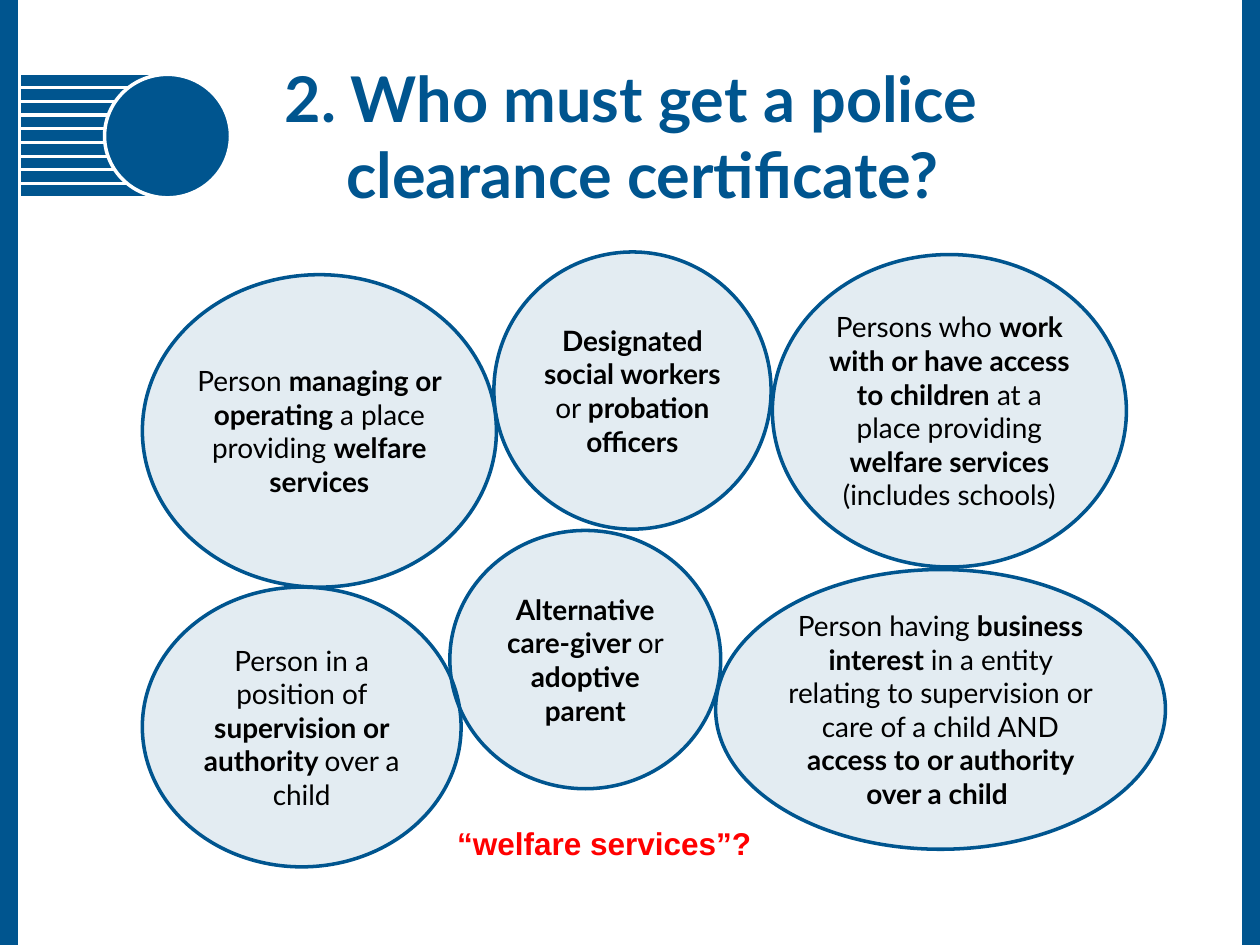
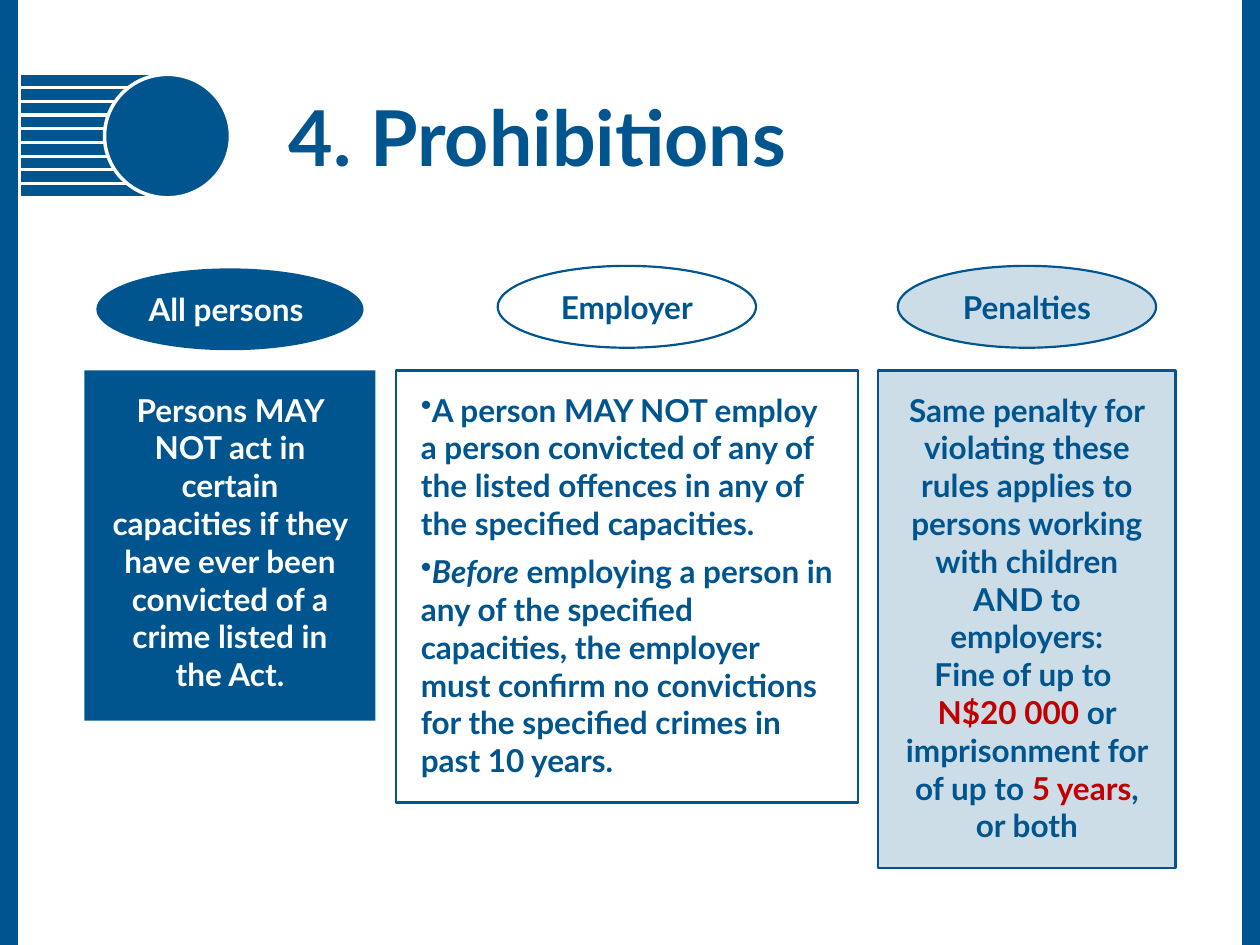
from dataclasses import dataclass
from typing import Optional

from lxml import etree
from pptx import Presentation
from pptx.dml.color import RGBColor
from pptx.enum.shapes import MSO_CONNECTOR, MSO_SHAPE
from pptx.enum.text import MSO_ANCHOR, PP_ALIGN
from pptx.oxml.ns import qn
from pptx.util import Inches, Pt

OVAL, RECTANGLE = MSO_SHAPE.OVAL, MSO_SHAPE.RECTANGLE
STRAIGHT = MSO_CONNECTOR.STRAIGHT
LEFT, CENTER = PP_ALIGN.LEFT, PP_ALIGN.CENTER
TOP, MIDDLE = MSO_ANCHOR.TOP, MSO_ANCHOR.MIDDLE

# The page is a grid of square cells
COLUMNS, ROWS = 100, 75
CELL = Inches(0.1)


@dataclass(frozen=True)
class Theme:
    blue: str = "00558F"
    white: str = "FFFFFF"
    black: str = "000000"
    red: str = "FF0000"
    dark_red: str = "C00000"
    font: str = "Lato"
    note_font: str = "Arial"
    long_title: int = 36
    short_title: int = 44
    body: int = 18
    bubble: int = 16


THEME = Theme()


@dataclass(frozen=True)
class Box:
    col: float
    row: float
    cols: float
    rows: float

    def lengths(self) -> list[int]:
        return [cells(n) for n in (self.col, self.row, self.cols, self.rows)]


@dataclass(frozen=True)
class Look:
    fill: str
    line: Optional[str] = None
    line_width: float = 1.25
    opacity: int = 100


@dataclass(frozen=True)
class Span:
    text: str
    bold: bool = True
    italic: bool = False
    color: Optional[str] = None


@dataclass(frozen=True)
class TextStyle:
    size: int
    color: str = THEME.blue
    font: str = THEME.font
    align: PP_ALIGN = CENTER
    anchor: MSO_ANCHOR = TOP
    inset: tuple[float, float] = (0, 0)
    wrap: bool = True
    bullet: bool = False
    space_after: int = 0
    hanging: float = 0


@dataclass(frozen=True)
class Bubble:
    box: Box
    spans: list[Span]


@dataclass(frozen=True)
class Rule:
    heading: str
    heading_row: float
    heading_cols: float
    cols: float
    rows: float
    look: Look
    style: TextStyle
    paragraphs: list[list[Span]]


def cells(count: float) -> int:
    return round(count * CELL)


def plain(text: str) -> Span:
    return Span(text, bold=False)


# Drawing helpers
def write(shape, paragraphs: list[list[Span]], style: TextStyle) -> None:
    frame = shape.text_frame
    frame.word_wrap = style.wrap
    frame.vertical_anchor = style.anchor
    across, down = (cells(n) for n in style.inset)
    frame.margin_left = frame.margin_right = across
    frame.margin_top = frame.margin_bottom = down
    for index, spans in enumerate(paragraphs):
        para = frame.add_paragraph() if index else frame.paragraphs[0]
        para.alignment = style.align
        para.space_after = Pt(style.space_after)
        properties = para._p.get_or_add_pPr()
        properties.set("marL", str(cells(style.hanging)))
        properties.set("indent", str(-cells(style.hanging)))
        if style.bullet:
            etree.SubElement(properties, qn("a:buChar")).set("char", "•")
        for span in spans:
            for line_index, line in enumerate(span.text.split("\n")):
                if line_index:
                    para.add_line_break()
                if line:
                    run = para.add_run()
                    run.text = line
                    font = run.font
                    font.name, font.size = style.font, Pt(style.size)
                    font.bold, font.italic = span.bold, span.italic
                    font.color.rgb = RGBColor.from_string(span.color or style.color)


def draw_shape(page, kind: MSO_SHAPE, box: Box, look: Look):
    shape = page.shapes.add_shape(kind, *box.lengths())
    shape.shadow.inherit = False
    shape.fill.solid()
    shape.fill.fore_color.rgb = RGBColor.from_string(look.fill)
    if look.opacity < 100:
        color = shape.element.spPr.find(qn("a:solidFill")).find(qn("a:srgbClr"))
        etree.SubElement(color, qn("a:alpha")).set("val", str(look.opacity * 1000))
    if look.line:
        shape.line.color.rgb = RGBColor.from_string(look.line)
        shape.line.width = Pt(look.line_width)
    else:
        shape.line.fill.background()
    return shape


def draw_text(page, box: Box, text: str, style: TextStyle, color: Optional[str] = None) -> None:
    write(page.shapes.add_textbox(*box.lengths()), [[Span(text, color=color)]], style)


def draw_line(page, start: tuple[float, float], end: tuple[float, float], width: float) -> None:
    line = page.shapes.add_connector(STRAIGHT, *(cells(n) for n in start + end))
    line.line.color.rgb = RGBColor.from_string(THEME.blue)
    line.line.width = Pt(width)
    etree.SubElement(line.element.spPr, qn("a:effectLst"))


def add_page(deck):
    """Blank page with side bands and the striped emblem."""
    page = deck.slides.add_slide(deck.slide_layouts[6])
    band_inset = 0.7
    for col in (band_inset, COLUMNS - band_inset):
        draw_line(page, (col, 0), (col, ROWS), 10)
    for stripe in range(9):
        row = 6.4 + 1.09 * stripe
        draw_line(page, (1.7, row), (12.9, row), 6)
    draw_shape(page, OVAL, Box(8.3, 5.9, 10, 9.8), Look(THEME.blue, THEME.white, 2))
    return page


# Page 1: who needs a certificate
BUBBLE_LOOK = Look(THEME.blue, THEME.blue, 2, opacity=11)
BUBBLE_STYLE = TextStyle(THEME.bubble, THEME.black, anchor=MIDDLE)
BUBBLES = [
    Bubble(Box(35.7, 42.1, 21.5, 20.5), [
        Span("Alternative care-giver "), plain("or "), Span("adoptive parent")]),
    Bubble(Box(61.3, 20.2, 28.1, 24.8), [
        plain("Persons who "), Span("work with or have access to children"),
        plain(" at a place providing "), Span("welfare services "),
        plain("(includes schools)")]),
    Bubble(Box(11.3, 46.6, 25.3, 22.2), [
        plain("Person in a position of "), Span("supervision or authority "),
        plain("over a child")]),
    Bubble(Box(56.8, 45.2, 35.7, 22.2), [
        plain("Person having "), Span("business interest "),
        plain("in a entity relating to supervision or care of a child AND "),
        Span("access to or authority over a child ")]),
    Bubble(Box(39.2, 20, 22, 22), [
        Span("Designated social workers "), plain("or "), Span("probation officers")]),
    Bubble(Box(11.3, 21.8, 28.1, 24.8), [
        plain("Person "), Span("managing or operating "),
        plain("a place providing "), Span("welfare services")]),
]


def build_certificate_page(deck) -> None:
    page = add_page(deck)
    title_style = TextStyle(THEME.long_title, align=LEFT, anchor=MIDDLE,
                            inset=(1, 0.5), hanging=4.9)
    draw_text(page, Box(21.6, 4.5, 79.5, 12.5),
              "2. Who must get a police \nclearance certificate?", title_style)
    for bubble in BUBBLES:
        shape = draw_shape(page, OVAL, bubble.box, BUBBLE_LOOK)
        write(shape, [bubble.spans], BUBBLE_STYLE)
    note_style = TextStyle(THEME.body, THEME.red, THEME.note_font, LEFT,
                           inset=(1, 0.5), wrap=False)
    draw_text(page, Box(35.3, 64.9, 25.6, 4), "“welfare services”?", note_style)


# Page 2: prohibitions in three columns
PANEL_INSET = (2, 1.6)
HEADING_INSET = (0.8, 0.8)
FIRST_COL, PANEL_ROW, PANEL_GAP, HEADING_ROWS = 6.7, 29.4, 1.6, 6.5
RULES = [
    Rule("All persons ", 21.3, 21.2, 23.1, 27.8, Look(THEME.blue),
         TextStyle(THEME.body, THEME.white, inset=PANEL_INSET),
         [[Span("Persons MAY NOT act in certain capacities if they have ever been "
                "convicted of a crime listed in the Act.")]]),
    Rule("Employer", 21.1, 20.5, 36.7, 34.3, Look(THEME.white, THEME.blue),
         TextStyle(THEME.body, align=LEFT, inset=PANEL_INSET, bullet=True, space_after=6),
         [[Span("A person MAY NOT employ a person convicted of any of the listed "
                "offences in any of the specified capacities.")],
          [Span("Before", italic=True),
           Span(" employing a person in any of the specified capacities, the employer "
                "must confirm no convictions for the specified crimes in past 10 years.")]]),
    Rule("Penalties", 21.1, 20.5, 23.6, 39.5, Look(THEME.blue, THEME.blue, opacity=20),
         TextStyle(THEME.body, inset=PANEL_INSET),
         [[Span("Same penalty for violating these rules applies to persons working "
                "with children AND to employers:")],
          [Span("Fine of up to \n"), Span("N$20 000 ", color=THEME.dark_red),
           Span("or imprisonment for of up to "),
           Span("5 years", color=THEME.dark_red), Span(", or both")]]),
]


def build_prohibitions_page(deck) -> None:
    page = add_page(deck)
    draw_text(page, Box(22.9, 7.1, 68.1, 7.4), "4. Prohibitions",
              TextStyle(THEME.short_title, align=LEFT, anchor=MIDDLE))
    col = FIRST_COL
    for rule in RULES:
        heading_col = col + (rule.cols - rule.heading_cols) / 2
        heading = draw_shape(page, OVAL, Box(heading_col, rule.heading_row,
                                             rule.heading_cols, HEADING_ROWS), rule.look)
        write(heading, [[Span(rule.heading)]],
              TextStyle(THEME.body, rule.style.color, inset=HEADING_INSET))
        panel = draw_shape(page, RECTANGLE, Box(col, PANEL_ROW, rule.cols, rule.rows), rule.look)
        write(panel, rule.paragraphs, rule.style)
        col += rule.cols + PANEL_GAP


def main() -> None:
    deck = Presentation()
    deck.slide_width, deck.slide_height = cells(COLUMNS), cells(ROWS)
    build_certificate_page(deck)
    build_prohibitions_page(deck)
    deck.save("out.pptx")


if __name__ == "__main__":
    main()
